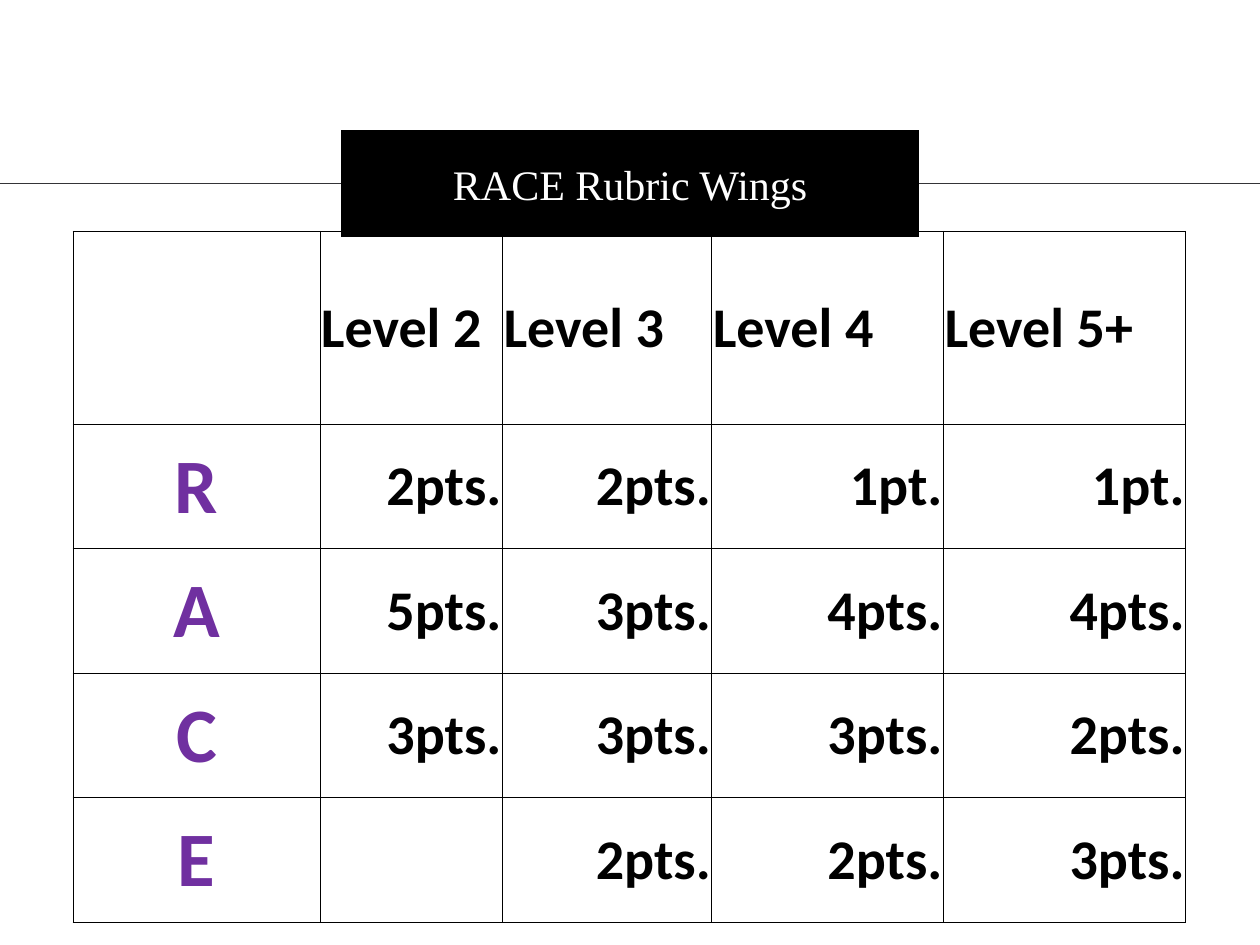
from lxml.etree import SubElement as Sub
from pptx import Presentation
from pptx.dml.color import RGBColor
from pptx.enum.shapes import MSO_CONNECTOR as Conn
from pptx.enum.text import MSO_ANCHOR as Anchor, MSO_AUTO_SIZE as Auto, PP_ALIGN as Align
from pptx.oxml.ns import qn
from pptx.util import Cm, Pt

BLACK = RGBColor(0x00, 0x00, 0x00)
WHITE = RGBColor(0xFF, 0xFF, 0xFF)
GREY = RGBColor(0x34, 0x34, 0x37)
PURPLE = RGBColor(0x70, 0x30, 0xA0)

COLS = [4.98, 3.68, 4.22, 4.67, 4.88]
ROWS = [3.89] + [2.51] * 4
RUBRIC = [
    ["", "Level 2", "Level 3", "Level 4", "Level 5+"],
    ["R", "2pts.", "2pts.", "1pt.", "1pt."],
    ["A", "5pts.", "3pts.", "4pts.", "4pts."],
    ["C", "3pts.", "3pts.", "3pts.", "2pts."],
    ["E", "", "2pts.", "2pts.", "3pts."],
]


def write(frame, text, font="Calibri", size=32, color=BLACK, bold=True, align=Align.LEFT):
    para = frame.paragraphs[0]
    para.alignment = align
    para.space_before = Pt(0)
    run = para.add_run()
    run.text = text
    run.font.name = font
    run.font.size = Pt(size)
    run.font.bold = bold
    run.font.color.rgb = color


class Deck:
    edge = Pt(0.5)
    pad = Cm(0.02)

    def __init__(self):
        self.prs = Presentation()
        self.prs.slide_width, self.prs.slide_height = Cm(25.4), Cm(19.05)
        self.slide = self.prs.slides.add_slide(self.prs.slide_layouts[5])
        self.shapes = self.slide.shapes

    def rule(self, top):
        line = self.shapes.add_connector(Conn.STRAIGHT, 0, Cm(top), self.prs.slide_width, Cm(top))
        line.line.color.rgb = GREY
        line.line.width = Pt(1)
        Sub(line._element.spPr, qn("a:effectLst"))

    def border(self, cell):
        props = cell._tc.get_or_add_tcPr()
        for side in ("lnL", "lnR", "lnT", "lnB"):
            line = Sub(props, qn(f"a:{side}"), w=str(int(self.edge)))
            Sub(Sub(line, qn("a:solidFill")), qn("a:srgbClr"), val=str(BLACK))

    def cell(self, cell, text, **form):
        self.border(cell)
        cell.fill.background()
        cell.vertical_anchor = Anchor.MIDDLE
        cell.margin_left = cell.margin_right = cell.margin_top = self.pad
        cell.margin_bottom = 0
        if text:
            write(cell.text_frame, text, **form)

    def table(self, left, top, data):
        frame = self.shapes.add_table(len(ROWS), len(COLS), Cm(left), Cm(top),
                                      Cm(sum(COLS)), Cm(sum(ROWS)))
        grid = frame.table
        grid.first_row = grid.horz_banding = False
        for col, width in zip(grid.columns, COLS):
            col.width = Cm(width)
        for row, height in zip(grid.rows, ROWS):
            row.height = Cm(height)
        for i, row in enumerate(data):
            for j, text in enumerate(row):
                if i == 0:
                    form = {}
                elif j == 0:
                    form = {"size": 44, "color": PURPLE, "align": Align.CENTER}
                else:
                    form = {"align": Align.RIGHT}
                self.cell(grid.cell(i, j), text, **form)

    def title(self, text, left, top, width, height):
        box = self.shapes.title
        box.left, box.top, box.width, box.height = map(Cm, (left, top, width, height))
        box.fill.solid()
        box.fill.fore_color.rgb = BLACK
        box.line.color.rgb = BLACK
        box.line.width = Pt(6)
        Sub(box.line._get_or_add_ln(), qn("a:miter"), lim="800000")
        frame = box.text_frame
        frame.word_wrap = True
        frame.auto_size = Auto.NONE
        frame.vertical_anchor = Anchor.MIDDLE
        frame.margin_left = frame.margin_right = Cm(0.25)
        frame.margin_top = frame.margin_bottom = Cm(0.25)
        write(frame, text, font="Times New Roman", size=24, color=WHITE,
              bold=False, align=Align.CENTER)
        self.shapes._spTree.append(box._element)


def main():
    deck = Deck()
    deck.rule(3.7)
    deck.table(1.47, 4.66, RUBRIC)
    deck.title("RACE Rubric Wings", 6.99, 2.72, 11.43, 1.95)
    deck.prs.save("out.pptx")


if __name__ == "__main__":
    main()
